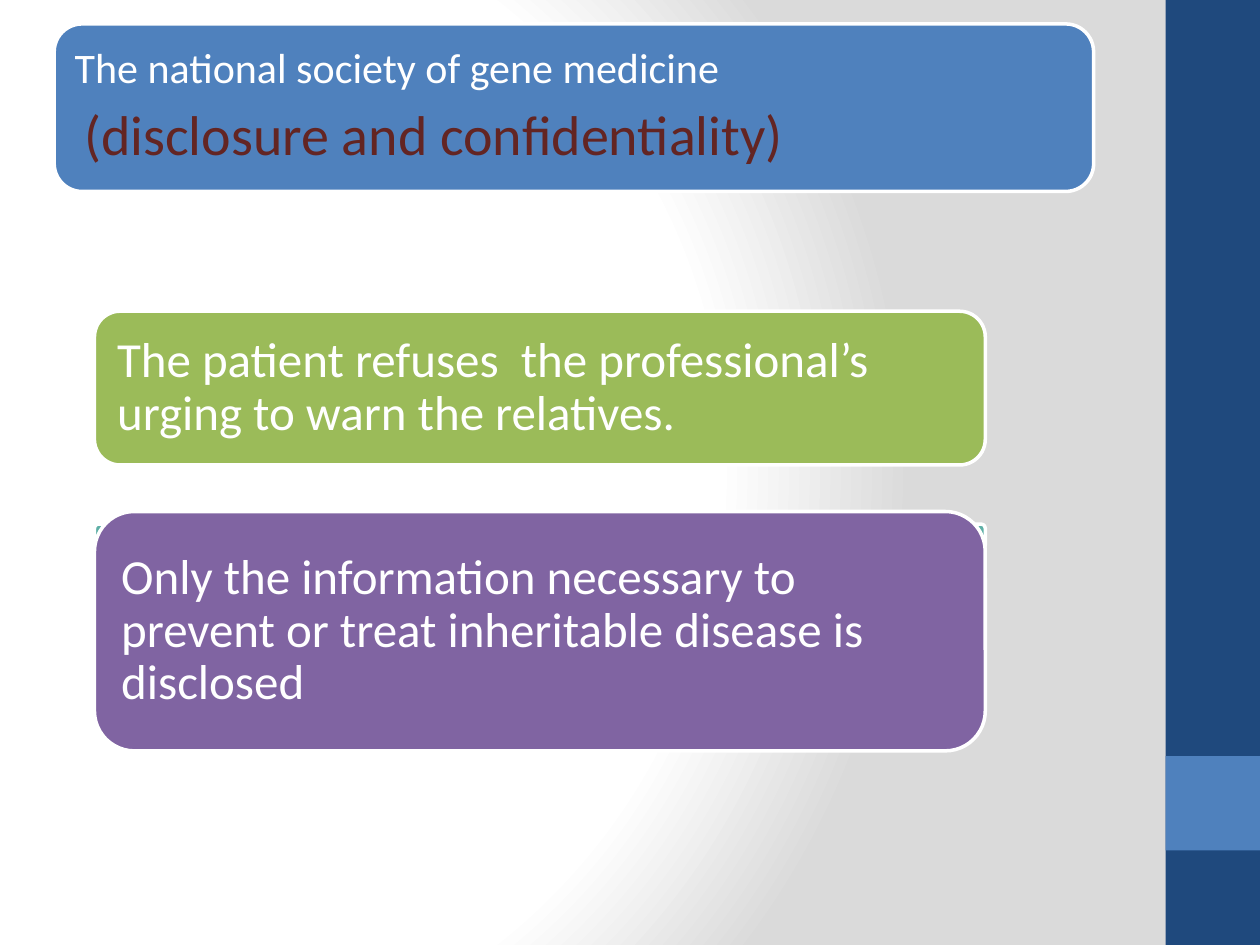
import pptx
import pptx.dml.color
import pptx.enum.shapes
import pptx.enum.text
import pptx.oxml
import pptx.oxml.ns
import pptx.util
from pptx.util import Inches

SHAPES = pptx.enum.shapes.MSO_SHAPE
WHITE = "FFFFFF"
BACKGROUND_STOPS = [(0, WHITE), (75, WHITE), (100, "DADADA")]


def color(hex_value):
    return pptx.dml.color.RGBColor.from_string(hex_value)


def paint_background(slide):
    # Circular gradient, which needs XML
    slide.background.fill.gradient()
    gradient = slide.element.find(".//" + pptx.oxml.ns.qn("a:gradFill"))
    stops = "".join(
        f'<a:gs pos="{position * 1000}"><a:srgbClr val="{hex_value}"/></a:gs>'
        for position, hex_value in BACKGROUND_STOPS)
    gradient.getparent().replace(gradient, pptx.oxml.parse_xml(
        f'<a:gradFill {pptx.oxml.ns.nsdecls("a")} rotWithShape="1">'
        f'<a:gsLst>{stops}</a:gsLst><a:path path="circle">'
        '<a:fillToRect l="20000" t="50000" r="100000" b="50000"/>'
        '</a:path></a:gradFill>'))


def add_block(slide, kind, box, fill, outline=None):
    block = slide.shapes.add_shape(kind, *map(Inches, box))
    block.shadow.inherit = False
    block.fill.solid()
    block.fill.fore_color.rgb = color(fill)
    if outline:
        block.line.color.rgb = color(outline)
        block.line.width = pptx.util.Pt(2)
    else:
        block.line.fill.background()
    return block


def add_side_band(slide, box):
    left, top, width, height = box
    add_block(slide, SHAPES.RECTANGLE, box, "1F497D")
    # Square accent, one width above the bottom
    accent_top = top + height - 2 * width
    add_block(slide, SHAPES.RECTANGLE, (left, accent_top, width, width), "4F81BD")


def add_card(slide, box, fill, paragraphs, inset):
    """Rounded card; each paragraph is a list of (text, size, colour) runs."""
    card = add_block(slide, SHAPES.ROUNDED_RECTANGLE, box, fill, WHITE)
    frame = card.text_frame
    frame_format = {"word_wrap": True,
                    "vertical_anchor": pptx.enum.text.MSO_ANCHOR.MIDDLE}
    for side in ("left", "top", "right", "bottom"):
        frame_format["margin_" + side] = Inches(inset)
    for name, value in frame_format.items():
        setattr(frame, name, value)

    for index, runs in enumerate(paragraphs):
        paragraph = frame.add_paragraph() if index else frame.paragraphs[0]
        paragraph_format = {"alignment": pptx.enum.text.PP_ALIGN.LEFT,
                            "line_spacing": 0.9,
                            "space_after": pptx.util.Pt(0.35 * runs[0][1])}
        for name, value in paragraph_format.items():
            setattr(paragraph, name, value)
        for text, size, text_color in runs:
            run = paragraph.add_run()
            run.text = text
            run_format = {"name": "Calibri", "size": pptx.util.Pt(size)}
            for name, value in run_format.items():
                setattr(run.font, name, value)
            run.font.color.rgb = color(text_color)


def add_heading(slide, box):
    add_card(slide, box, "4F81BD", [
        [("The national society of gene medicine", 24, WHITE)],
        [(" ", 24, WHITE), ("(disclosure and confidentiality)", 32, "632523")],
    ], 0.1)


def add_conditions(slide, box):
    left, top, width, height = box
    refusal_height, disclosure_height = 1.22, 1.9
    disclosure_top = top + height - disclosure_height
    add_card(slide, (left, top, width, refusal_height), "9BBB59", [
        [("The patient refuses  the professional’s urging to warn the relatives.",
          28, WHITE)]], 0.12)
    # Thin strip showing behind the corners of the lower card
    add_block(slide, SHAPES.ROUNDED_RECTANGLE,
              (left, disclosure_top + 0.1, width, 0.2), "5EAFA6", WHITE)
    add_card(slide, (left, disclosure_top, width, disclosure_height), "8064A2", [
        [("Only the information necessary to prevent or treat inheritable "
          "disease is disclosed", 28, WHITE)]], 0.12)


def main():
    presentation = pptx.Presentation()
    presentation.slide_width = Inches(10)
    presentation.slide_height = Inches(7.5)
    slide = presentation.slides.add_slide(presentation.slide_layouts[6])

    paint_background(slide)
    add_side_band(slide, (9.25, 0, 0.75, 7.5))
    add_heading(slide, (0.43, 0.19, 8.25, 1.33))
    add_conditions(slide, (0.75, 2.47, 7.07, 3.49))
    presentation.save("out.pptx")


if __name__ == "__main__":
    main()
